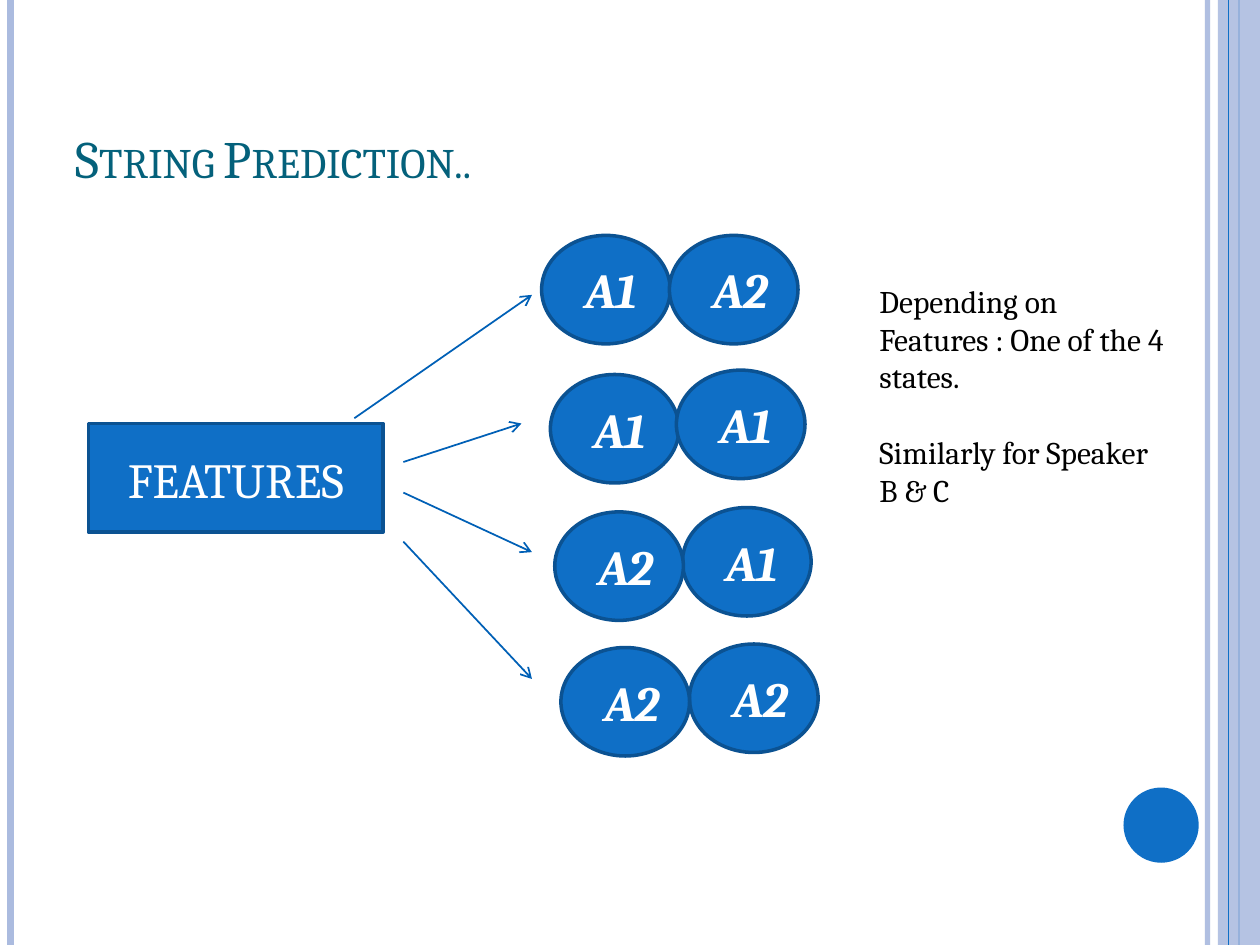
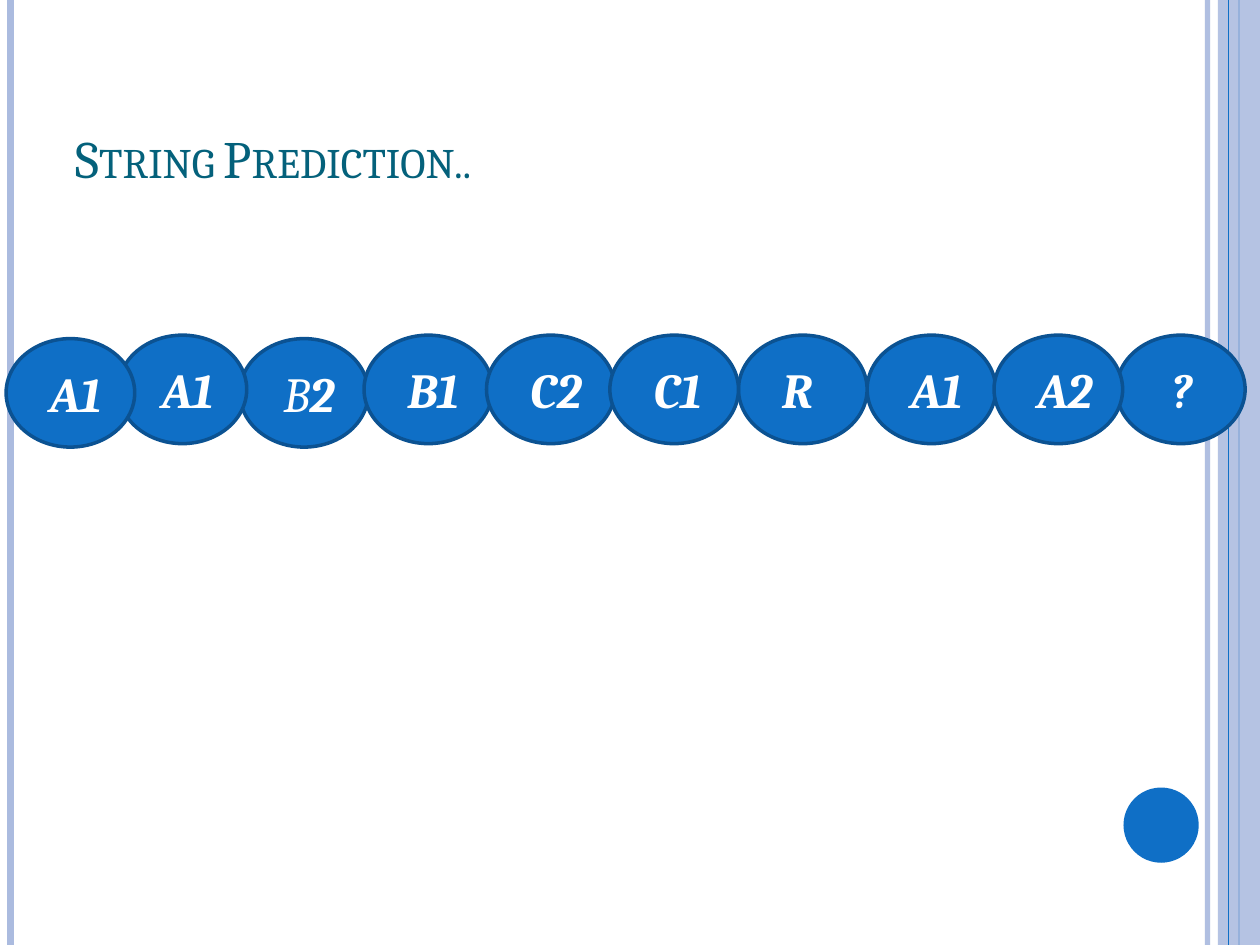
from lxml import etree
from pptx import Presentation
from pptx import util as u
from pptx.dml.color import RGBColor
from pptx.enum import shapes, text
from pptx.oxml import ns

PX = 6350
FONT = "Cambria"
COLORS = {
    "title": "04617B",
    "solid": "0F6FC6",
    "edge": "0B5292",
    "arrow": "0060B6",
    "band": "ABBBDF",
    "light": "FFFFFF",
    "dark": "000000",
}
SLIDE_W, SLIDE_H = 1440, 1080
STATE_W, STATE_H = 147, 124
LABEL_DX, LABEL_DY, LABEL_W, LABEL_H = 18, 21, 135, 82
LABEL_INDENT, QUERY_INDENT = 32, 44


def draw_line(slide, ends, color, width):
    line = slide.shapes.add_connector(
        shapes.MSO_CONNECTOR.STRAIGHT, *[value * PX for value in ends])
    line.line.color.rgb = RGBColor.from_string(COLORS[color])
    line.line.width = u.Pt(width)
    etree.SubElement(line._element.spPr, ns.qn("a:effectLst"))
    return line


def write(parent, place, paragraphs, size, color):
    frame = parent.add_textbox(*[value * PX for value in place]).text_frame
    frame.word_wrap = True
    frame.text = "\n".join(paragraphs)
    for paragraph in frame.paragraphs:
        for run in paragraph.runs:
            run.font.name = FONT
            run.font.size = u.Pt(size)
            run.font.color.rgb = RGBColor.from_string(COLORS[color])
    return frame


prs = Presentation()
prs.slide_width, prs.slide_height = SLIDE_W * PX, SLIDE_H * PX

prediction_states = [
    ("A1", 619, 269), ("A2", 765, 269),
    ("A1", 629, 428), ("A1", 780, 580),
    ("A1", 773, 423), ("A2", 788, 736),
    ("A2", 641, 740), ("A2", 634, 585),
]
sequence_states = [
    ("B2", 274, 387), ("A1", 135, 383), ("A1", 7, 387), ("?", 1276, 383),
    ("A1", 991, 383), ("A2", 1136, 383), ("R", 844, 383),
    ("B1", 416, 383), ("C2", 556, 383), ("C1", 697, 383),
]

slides = []
for states in (prediction_states, sequence_states):
    slide = prs.slides.add_slide(prs.slide_layouts[6])
    slides.append(slide)

    inner_rule = draw_line(slide, (1380, 0, 1380, SLIDE_H), "band", 3)
    draw_line(slide, (12, 0, 12, SLIDE_H), "band", 4.5)
    draw_line(slide, (1416, 0, 1416, SLIDE_H), "solid", 1.5)
    side_band = slide.shapes.add_shape(
        shapes.MSO_SHAPE.RECTANGLE, 1392 * PX, 0, 48 * PX, SLIDE_H * PX)
    draw_line(slide, (1404, 0, 1404, SLIDE_H), "solid", 0.75)
    page_disc = slide.shapes.add_shape(
        shapes.MSO_SHAPE.OVAL, 1284 * PX, 900 * PX, 86 * PX, 86 * PX)
    solids = [(side_band, "band", None), (page_disc, "solid", None)]

    title = write(slide.shapes, (72, 43, 1176, 180), ["String Prediction.."], 30, "title")
    title.vertical_anchor = text.MSO_ANCHOR.BOTTOM
    title.paragraphs[0].runs[0].font._element.set("cap", "small")

    for name, x, y in states:
        state = slide.shapes.add_group_shape().shapes
        oval = state.add_shape(
            shapes.MSO_SHAPE.OVAL, x * PX, y * PX, STATE_W * PX, STATE_H * PX)
        solids.append((oval, "solid", "edge"))
        label = write(state, (x + LABEL_DX, y + LABEL_DY, LABEL_W, LABEL_H),
                      [name], 28, "light")
        label.margin_left = (QUERY_INDENT if name == "?" else LABEL_INDENT) * PX
        font = label.paragraphs[0].runs[0].font
        font.bold = font.italic = True
        if name == "B2":
            letter = label.paragraphs[0].runs[0]
            digit = label.paragraphs[0].add_run()
            letter.text, digit.text = name
            digit.font.name, digit.font.size = FONT, u.Pt(28)
            digit.font.color.rgb = RGBColor.from_string(COLORS["light"])
            digit.font.bold = digit.font.italic = True
            letter.font.bold = False

    if states is prediction_states:
        features = slide.shapes.add_shape(
            shapes.MSO_SHAPE.RECTANGLE, 101 * PX, 484 * PX, 337 * PX, 124 * PX)
        solids.append((features, "solid", "edge"))

    for solid, fill, edge in solids:
        solid.shadow.inherit = False
        solid.fill.solid()
        solid.fill.fore_color.rgb = RGBColor.from_string(COLORS[fill])
        if edge:
            solid.line.color.rgb = RGBColor.from_string(COLORS[edge])
            solid.line.width = u.Pt(2)
        else:
            solid.line.fill.background()

    for faded, opacity in ((inner_rule, 93), (side_band, 87)):
        tint = faded._element.spPr.find(".//" + ns.qn("a:srgbClr"))
        etree.SubElement(tint, ns.qn("a:alpha"), val=str(opacity * 1000))

prediction = slides[0]
features_label = write(prediction.shapes, (112, 507, 315, 82), ["FEATURES"], 28, "light")
features_label.paragraphs[0].alignment = text.PP_ALIGN.CENTER

for ends in ((405, 478, 608, 337), (461, 528, 596, 484),
             (461, 563, 608, 631), (461, 619, 608, 776)):
    arrow = draw_line(prediction, ends, "arrow", 1)
    etree.SubElement(arrow.line._get_or_add_ln(), ns.qn("a:tailEnd"), type="arrow")

note = write(prediction.shapes, (991, 315, 360, 233),
             ["Depending on Features : One of the 4 states.",
              "Similarly for Speaker B & C"], 18, "dark")
note.paragraphs[1].space_before = u.Pt(21.5)

prs.save("out.pptx")
